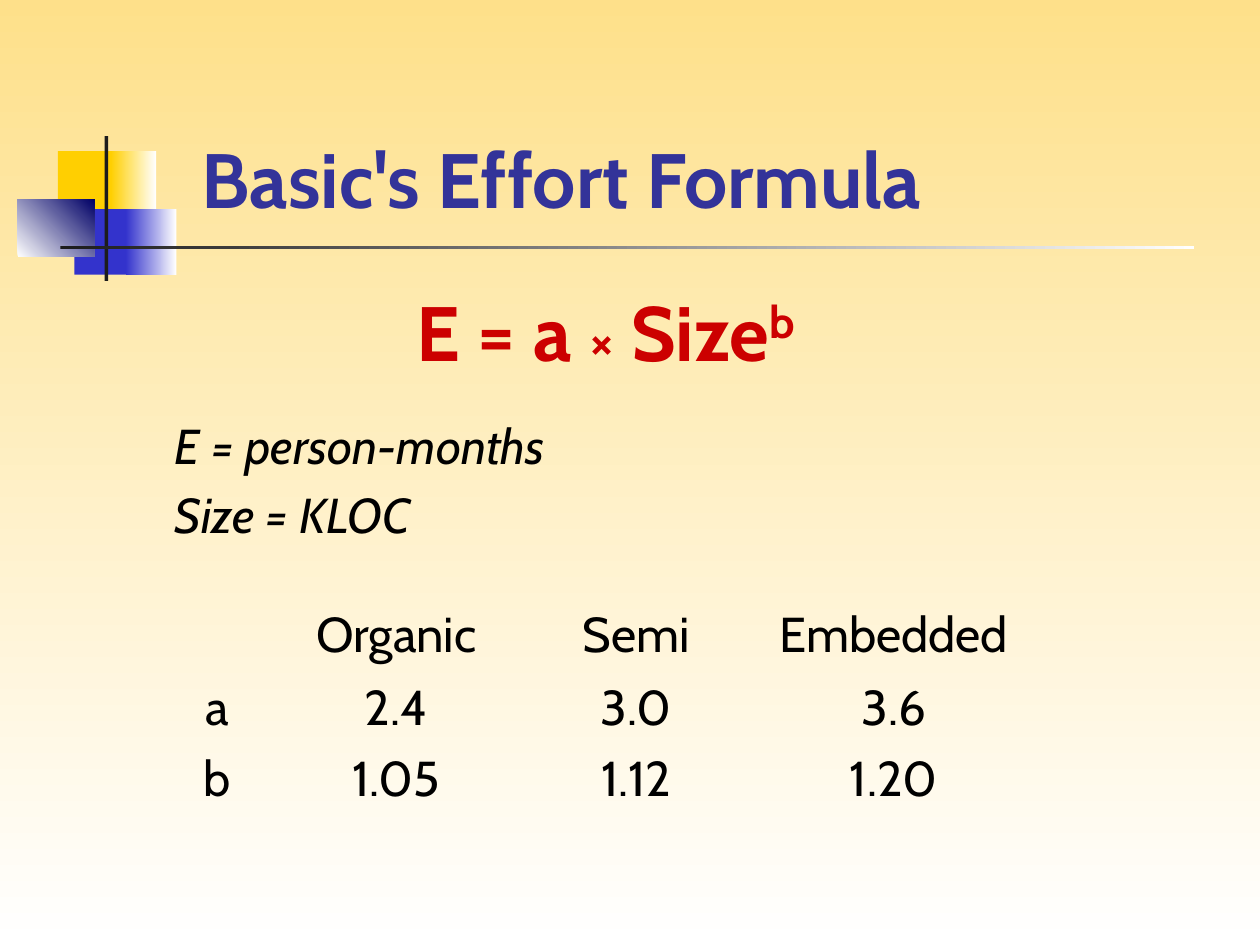
from pptx import Presentation
from pptx.dml.color import RGBColor
from pptx.enum.shapes import MSO_SHAPE
from pptx.enum.text import MSO_ANCHOR, MSO_AUTO_SIZE, PP_ALIGN
from pptx.util import Inches, Pt

RECTANGLE = MSO_SHAPE.RECTANGLE
LEFT, CENTER = PP_ALIGN.LEFT, PP_ALIGN.CENTER
BOTTOM = MSO_ANCHOR.BOTTOM
NO_AUTOFIT = MSO_AUTO_SIZE.NONE
TITLE_ONLY = 5
PLAIN_TABLE = "{2D5ABB26-0587-4C30-8999-92F81FD0307C}"

FONT = "Cabin"
CREAM = RGBColor(0xFE, 0xE0, 0x8A)
WHITE = RGBColor(0xFF, 0xFF, 0xFF)
BLACK = RGBColor(0x00, 0x00, 0x00)
CHARCOAL = RGBColor(0x1C, 0x1C, 0x1C)
YELLOW = RGBColor(0xFF, 0xCF, 0x01)
BLUE = RGBColor(0x33, 0x33, 0xCC)
NAVY = RGBColor(0x00, 0x00, 0x66)
INDIGO = RGBColor(0x33, 0x33, 0x99)
RED = RGBColor(0xCC, 0x00, 0x00)

# Left, top, width, height, colours (two make a gradient), gradient angle
ORNAMENTS = [
    (0.46, 1.2, 0.48, 0.52, [YELLOW], 0),
    (0.88, 1.2, 0.36, 0.52, [YELLOW, WHITE], 0),
    (0.59, 1.66, 0.46, 0.52, [BLUE], 0),
    (1, 1.66, 0.4, 0.52, [BLUE, WHITE], 0),
    (0.14, 1.58, 0.61, 0.46, [WHITE, NAVY], 45),
    (0.83, 1.08, 0.03, 1.15, [CHARCOAL], 0),
    (0.48, 1.95, 9, 0.03, [CHARCOAL, WHITE], 0),
]
COEFFICIENTS = [
    ["", "Organic", "Semi", "Embedded"],
    ["a", "2.4", "3.0", "3.6"],
    ["b", "1.05", "1.12", "1.20"],
]
COLUMN_WIDTHS = [0.95, 1.89, 1.92, 2.17]
ROW_HEIGHTS = [0.58, 0.5, 0.72]


def paint(fill, colors, angle=0):
    """Fill with one colour, or with a gradient between two."""
    if len(colors) == 1:
        fill.solid()
        fill.fore_color.rgb = colors[0]
        return
    fill.gradient()
    fill.gradient_angle = angle
    for stop, color in zip(fill.gradient_stops, colors):
        stop.color.rgb = color


def add_ornament(page, left, top, width, height, colors, angle):
    box = page.shapes.add_shape(
        RECTANGLE, Inches(left), Inches(top), Inches(width), Inches(height))
    box.shadow.inherit = False
    box.line.fill.background()
    paint(box.fill, colors, angle)


def add_text(para, text, size=28, color=BLACK, bold=False, italic=False,
             align=LEFT, before=0, raised=False):
    para.alignment = align
    para.space_before = Pt(before)
    span = para.add_run()
    span.text = text
    font = span.font
    font.name, font.size = FONT, Pt(size)
    font.bold, font.italic = bold, italic
    font.color.rgb = color
    if raised:
        span._r.get_or_add_rPr().set("baseline", "30000")


def format_title(title):
    title.left, title.top = Inches(1.26), Inches(0.23)
    title.width, title.height = Inches(8.52), Inches(1.6)
    frame = title.text_frame
    frame.auto_size = NO_AUTOFIT
    frame.vertical_anchor = BOTTOM
    frame.margin_left = Inches(0.34)
    add_text(frame.paragraphs[0], "Basic's Effort Formula",
             size=44, color=INDIGO, bold=True)


def add_formula(page):
    box = page.shapes.add_textbox(
        Inches(1.29), Inches(2.21), Inches(7.04), Inches(4.5))
    frame = box.text_frame
    frame.word_wrap = True
    formula = frame.paragraphs[0]
    for text, size, raised in [("E = a ", 44, False), ("×", 32, False),
                               (" Size", 44, False), ("b", 44, True)]:
        add_text(formula, text, size=size, color=RED, bold=True,
                 align=CENTER, raised=raised)
    for text, before in [("E = person-months", 22), ("Size = KLOC", 5.6)]:
        add_text(frame.add_paragraph(), text, italic=True, before=before)


def add_coefficients(page):
    frame = page.shapes.add_table(
        len(ROW_HEIGHTS), len(COLUMN_WIDTHS), Inches(1.25), Inches(4.75),
        Inches(sum(COLUMN_WIDTHS)), Inches(sum(ROW_HEIGHTS)))
    table = frame.table
    table.first_row = table.horz_banding = False
    table._tbl.tblPr[0].text = PLAIN_TABLE
    for column, width in zip(table.columns, COLUMN_WIDTHS):
        column.width = Inches(width)
    for row, height, texts in zip(table.rows, ROW_HEIGHTS, COEFFICIENTS):
        row.height = Inches(height)
        for cell, text in zip(row.cells, texts):
            cell.fill.background()
            if text:
                add_text(cell.text_frame.paragraphs[0], text, align=CENTER)


def main():
    deck = Presentation()
    deck.slide_width, deck.slide_height = Inches(10), Inches(7.5)
    page = deck.slides.add_slide(deck.slide_layouts[TITLE_ONLY])
    paint(page.background.fill, [CREAM, WHITE], angle=270)
    # Squares and rules beside the title
    for ornament in ORNAMENTS:
        add_ornament(page, *ornament)
    # Title, formula and coefficients
    format_title(page.shapes.title)
    add_formula(page)
    add_coefficients(page)
    deck.save("out.pptx")


if __name__ == "__main__":
    main()
